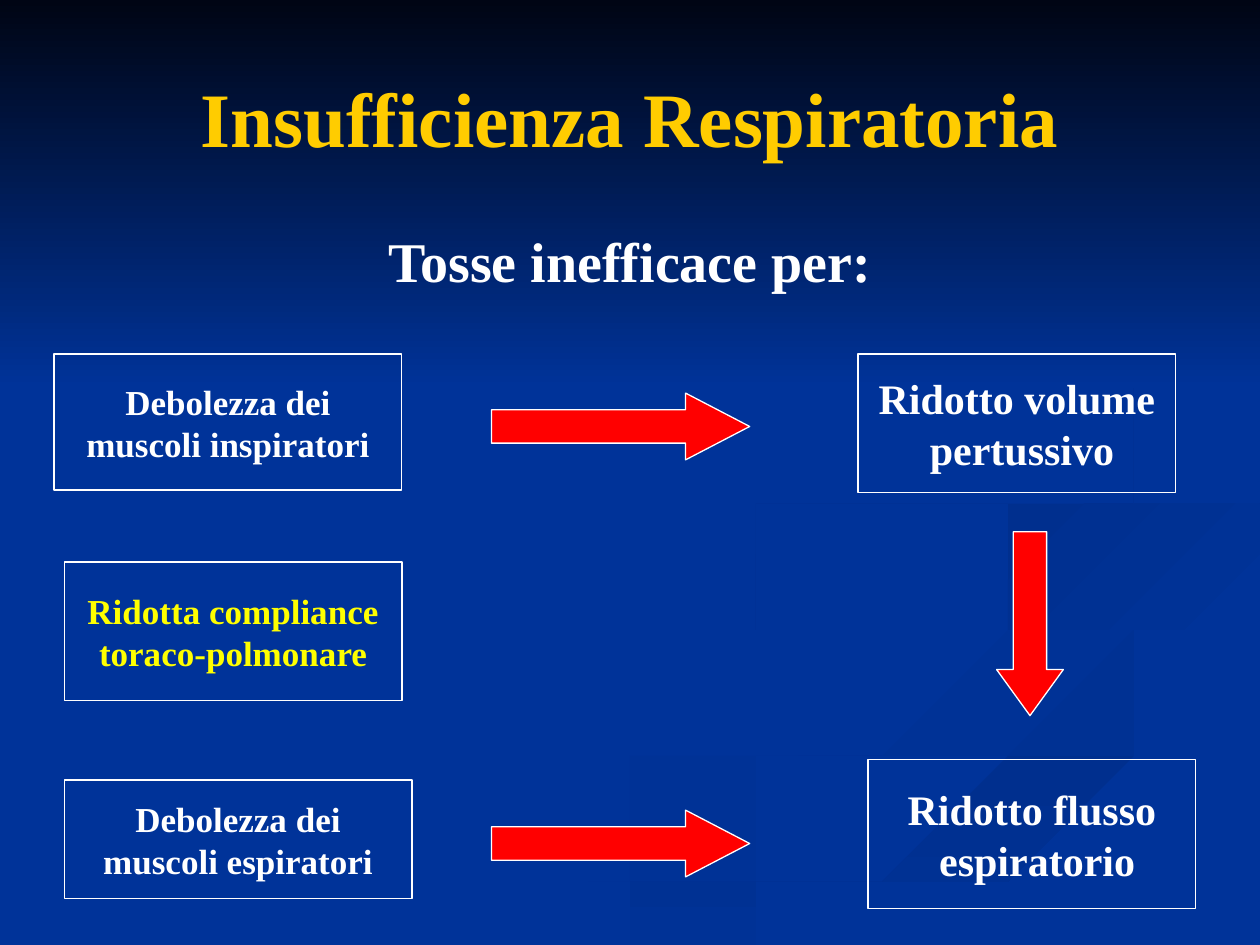
from dataclasses import dataclass

from pptx import Presentation
from pptx.dml.color import RGBColor
from pptx.enum import shapes, text
from pptx.oxml import xmlchemy
from pptx.util import Inches, Pt


@dataclass(frozen=True)
class Theme:
    """Colours, font and type sizes of the slide."""
    font: str = "Times New Roman"
    back: str = "003399"
    night: str = "000514"
    shade: str = "002F8E"
    veil: str = "003193"
    gold: str = "FFCC00"
    white: str = "FFFFFF"
    yellow: str = "FFFF00"
    red: str = "FF0000"
    title: int = 44
    lead: int = 32
    effect: int = 24
    cause: int = 20
    line: float = 0.75


T = Theme()
KINDS = shapes.MSO_SHAPE

RIBBONS = [
    (T.back, T.veil, 0, [
        (5.75, 4.6), (5.8, 4.84), (7.62, 5.47), (7.8, 5.79), (5.4, 6.49), (3, 7.49),
        (3.6, 7.49), (5.6, 6.65), (7.7, 6.1), (7.95, 5.67), (6.3, 5.03)]),
    (T.back, T.veil, 45, [
        (7.24, 4.64), (7.66, 5.12), (9, 5.57), (8.94, 6.05), (9.43, 5.7), (8.7, 5.3),
        (7.45, 4.9)]),
    (T.shade, T.back, 90, [
        (5.7, 7.49), (7.2, 6.82), (9.98, 6.09), (9.98, 5.81), (7.6, 6.47), (5.03, 7.49)]),
    (T.shade, T.back, 45, [
        (7.81, 4.6), (8.26, 4.96), (8.06, 4.68), (8.8, 4.39), (9.98, 4.2), (9.98, 4.02),
        (8.5, 4.27)]),
    (T.shade, T.back, 45, [
        (7.62, 2.33), (8.85, 3.2), (8.4, 3.78), (6.25, 4.26), (5.8, 4.74), (6.22, 5),
        (5.96, 4.6), (6.83, 4.3), (8.55, 3.9), (8.9, 3.24)]),
]


def rgb(value):
    """Turn a hex string into a colour."""
    return RGBColor.from_string(value)


def smooth(points, steps=6):
    """Round a closed outline with a Catmull-Rom curve."""
    count = len(points)
    curve = []
    for i in range(count):
        near = [points[(i + k) % count] for k in (-1, 0, 1, 2)]
        for t in (n / steps for n in range(steps)):
            curve.append(tuple(
                b + t * (c - a + t * (2 * a - 5 * b + 4 * c - d
                                      + t * (3 * (b - c) + d - a))) / 2
                for a, b, c, d in zip(*near)))
    return [(min(x, 10), min(y, 7.5)) for x, y in curve]


def write(p, words, size, color):
    """Add one bold centred run to a paragraph."""
    p.alignment = text.PP_ALIGN.CENTER
    r = p.add_run()
    r.text = words
    r.font.name, r.font.size, r.font.bold = T.font, Pt(size), True
    r.font.color.rgb = rgb(color)


def outline(sp, fill=None):
    """Give a shape a thin white line and an optional solid fill."""
    sp.shadow.inherit = False
    sp.line.color.rgb, sp.line.width = rgb(T.white), Pt(T.line)
    if fill:
        sp.fill.solid()
        sp.fill.fore_color.rgb = rgb(fill)
    else:
        sp.fill.background()


def blend(sp, first, last, angle):
    """Fill a lineless shape with a two-colour gradient, angle clockwise."""
    sp.shadow.inherit = False
    sp.line.fill.background()
    sp.fill.gradient()
    sp.fill.gradient_angle = (360 - angle) % 360
    for stop, color in zip(sp.fill.gradient_stops, (first, last)):
        stop.color.rgb = rgb(color)


def add_backdrop(s, left, top, width):
    """Draw the flowing ribbons and the dark upper band."""
    s.background.fill.solid()
    s.background.fill.fore_color.rgb = rgb(T.back)
    for first, last, angle, points in RIBBONS:
        start, *rest = smooth(points)
        builder = s.shapes.build_freeform(*start, scale=Inches(1))
        builder.add_line_segments(rest, close=True)
        blend(builder.convert_to_shape(Inches(left), Inches(top)), first, last, angle)
    box = map(Inches, (left, top, width, 3.08))
    blend(s.shapes.add_shape(KINDS.RECTANGLE, *box), T.night, T.back, 90)


def add_heading(s, left, top, width):
    """Fill the title and the lead line in the template's placeholders."""
    title, body = s.shapes.title, s.placeholders[1]
    for sp, drop, height, words, size, color in (
            (title, 0, 1.25, "Insufficienza Respiratoria", T.title, T.gold),
            (body, 1.45, 4.95, "Tosse inefficace per:", T.lead, T.white)):
        s.shapes._spTree.append(sp._element)
        sp.left, sp.top = Inches(left), Inches(top + drop)
        sp.width, sp.height = Inches(width), Inches(height)
        sp.text_frame.auto_size = text.MSO_AUTO_SIZE.NONE
        write(sp.text_frame.paragraphs[0], words, size, color)
    pPr = body.text_frame.paragraphs[0]._p.get_or_add_pPr()
    pPr.set("marL", str(Inches(0.38)))
    pPr.set("indent", str(-Inches(0.38)))
    pPr.append(xmlchemy.OxmlElement("a:buNone"))


def add_box(s, box, lines, size, color):
    """Add an outlined box with one paragraph for each line."""
    sp = s.shapes.add_shape(KINDS.RECTANGLE, *map(Inches, box))
    outline(sp)
    tf = sp.text_frame
    tf.word_wrap, tf.vertical_anchor = False, text.MSO_ANCHOR.MIDDLE
    for i, words in enumerate(lines):
        write(tf.add_paragraph() if i else tf.paragraphs[0], words, size, color)


def add_arrow(s, kind, box, head):
    """Add a red block arrow with the given head length."""
    sp = s.shapes.add_shape(kind, *map(Inches, box))
    sp.adjustments[0], sp.adjustments[1] = 0.5, head
    outline(sp, T.red)


def add_diagram(s, left, top):
    """Lay out causes, effects and arrows from the diagram's corner."""
    boxes = (
        (0, 0, 2.76, 1.08, ("Debolezza dei", "muscoli inspiratori"), T.cause, T.white),
        (6.38, 0, 2.52, 1.1, ("Ridotto volume", " pertussivo"), T.effect, T.white),
        (0.08, 1.65, 2.68, 1.1, ("Ridotta compliance", "toraco-polmonare"), T.cause, T.yellow),
        (0.08, 3.38, 2.76, 0.94, ("Debolezza dei", "muscoli espiratori"), T.cause, T.white),
        (6.46, 3.22, 2.6, 1.18, ("Ridotto flusso", " espiratorio"), T.effect, T.white))
    for x, y, width, height, lines, size, color in boxes:
        add_box(s, (left + x, top + y, width, height), lines, size, color)
    add_arrow(s, KINDS.DOWN_ARROW, (left + 7.48, top + 1.41, 0.53, 1.46), 0.69)
    for y in (0.31, 3.62):
        add_arrow(s, KINDS.RIGHT_ARROW, (left + 3.47, top + y, 2.05, 0.53), 0.96)


def main():
    """Build the slide and save it."""
    prs = Presentation()
    prs.slide_width, prs.slide_height = Inches(10), Inches(7.5)
    s = prs.slides.add_slide(prs.slide_layouts[1])
    add_backdrop(s, 0, 0, 10)
    add_heading(s, 0.5, 0.3, 9)
    add_diagram(s, 0.43, 2.81)
    prs.save("out.pptx")


if __name__ == "__main__":
    main()
